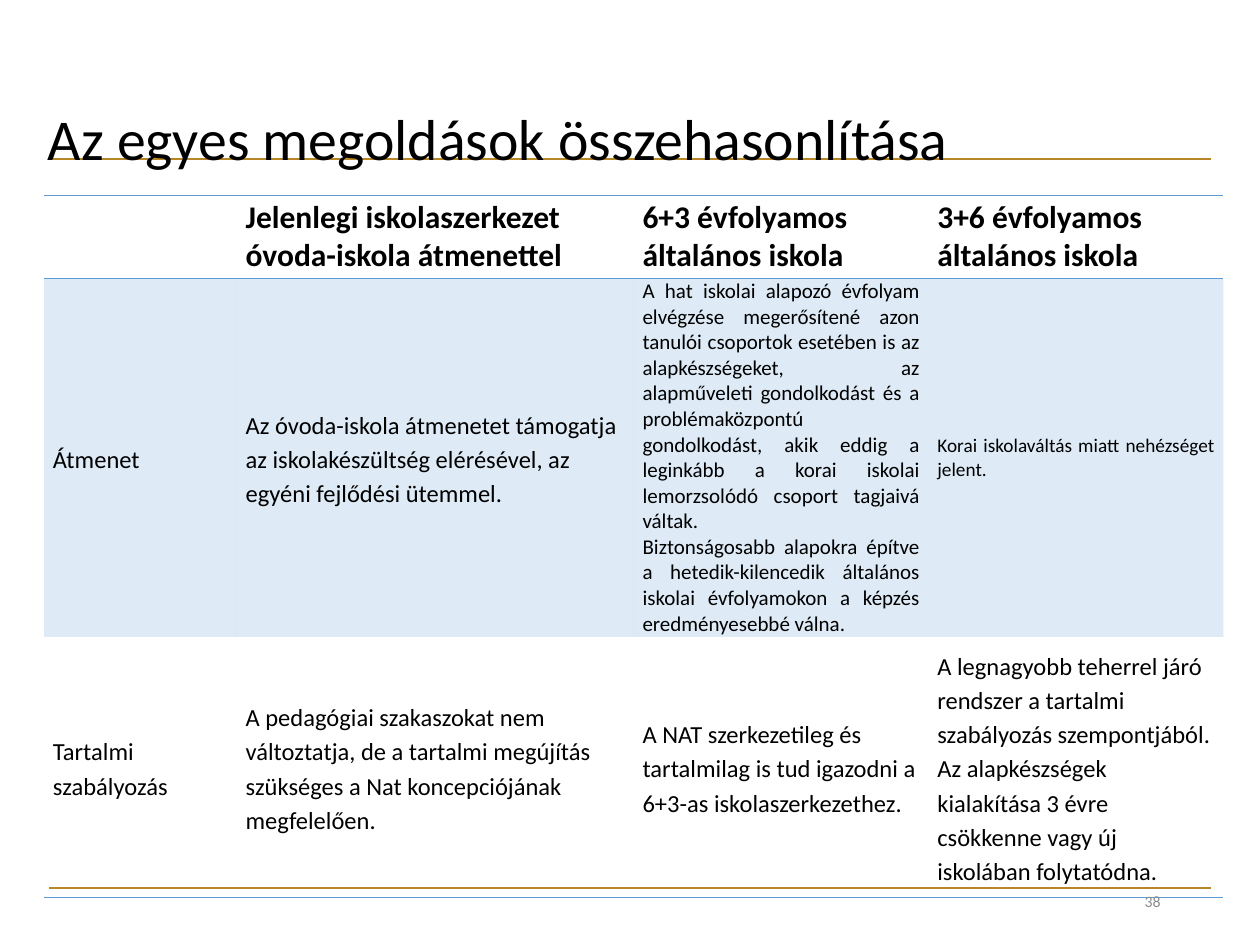
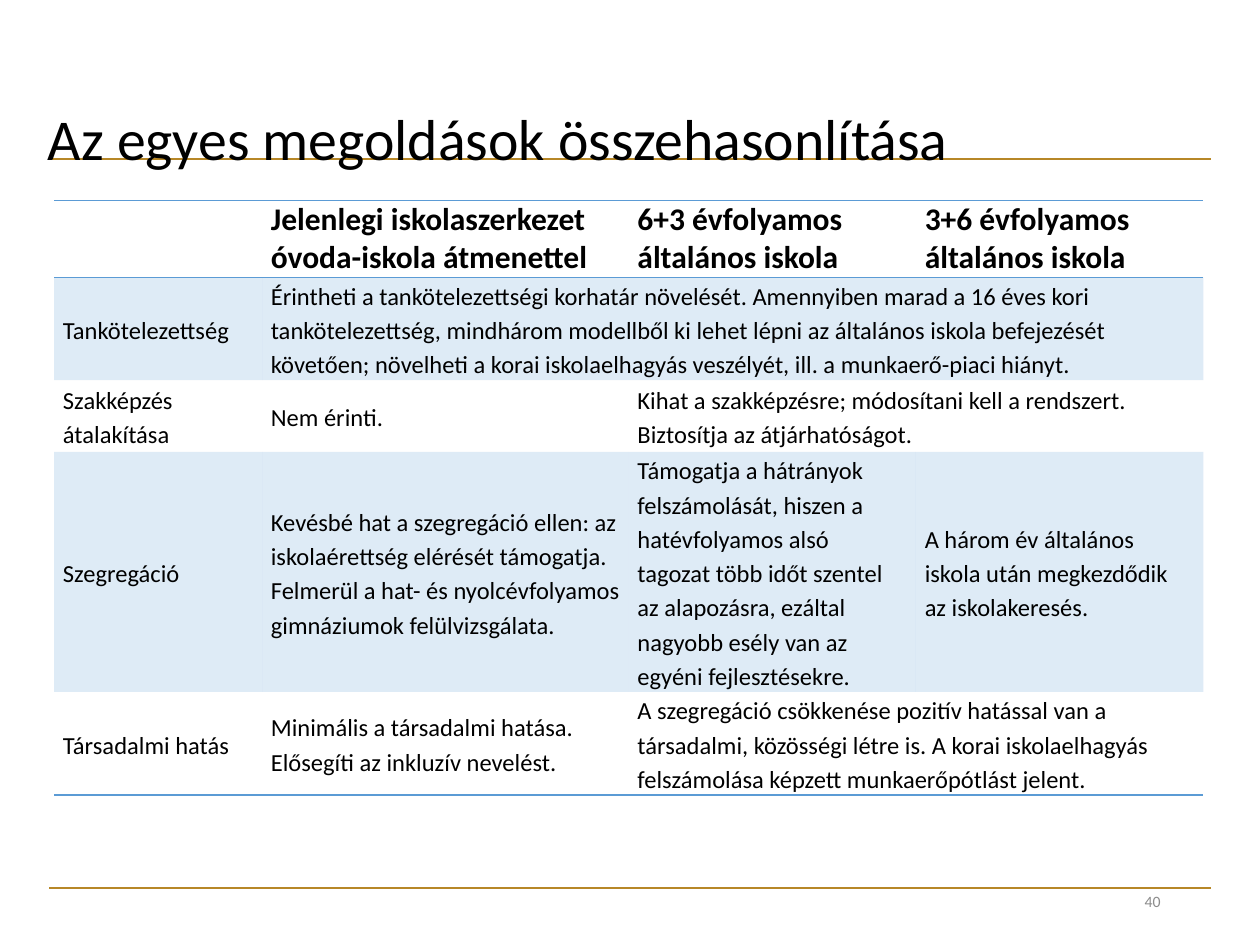
"""Builds two slides comparing school structure options in tables."""
from dataclasses import dataclass
from typing import Optional

from lxml import etree
from pptx import Presentation
from pptx import util as u
from pptx.dml.color import RGBColor
from pptx.enum import text as t
from pptx.oxml.ns import qn

FONT = "Calibri"
BLACK, GREY, GOLD, BLUE = "000000", "8C8C8C", "B78727", "5B9BD5"
BAND_ALPHA = 20
PLAIN_TABLE_STYLE = "{2D5ABB26-0587-4C30-8999-92F81FD0307C}"
TITLE = "Az egyes megoldások összehasonlítása"


@dataclass(frozen=True)
class Entry:
    text: str
    span: int = 1
    size: float = 14
    bold: bool = False
    spacing: Optional[float] = 1.15
    align: t.PP_ALIGN = t.PP_ALIGN.LEFT


@dataclass(frozen=True)
class Comparison:
    page: str
    left: float
    top: float
    widths: tuple[float, ...]
    heights: tuple[float, ...]
    rows: tuple[tuple[Entry, ...], ...]


def heading(content: str) -> Entry:
    return Entry(content, size=18, bold=True, spacing=None)


def justified(content: str, size: float) -> Entry:
    return Entry(content, size=size, spacing=None, align=t.PP_ALIGN.JUSTIFY)


HEADINGS = (
    heading(""),
    heading("Jelenlegi iskolaszerkezet óvoda-iskola átmenettel"),
    heading("6+3 évfolyamos\náltalános iskola"),
    heading("3+6 évfolyamos\náltalános iskola"),
)

COMPARISONS = (
    Comparison("38", 0.35, 1.55, (1.53, 3.15, 2.34, 2.34), (0.66, 2.63, 2.07), (
        HEADINGS,
        (
            Entry("Átmenet"),
            Entry("Az óvoda-iskola átmenetet támogatja az iskolakészültség elérésével, "
                  "az egyéni fejlődési ütemmel."),
            justified("A hat iskolai alapozó évfolyam elvégzése megerősítené azon tanulói "
                      "csoportok esetében is az alapkészségeket, az alapműveleti gondolkodást "
                      "és a problémaközpontú gondolkodást, akik eddig a leginkább a korai "
                      "iskolai lemorzsolódó csoport tagjaivá váltak.\n"
                      "Biztonságosabb alapokra építve a hetedik-kilencedik általános iskolai "
                      "évfolyamokon a képzés eredményesebbé válna.", 12),
            justified("Korai iskolaváltás miatt nehézséget jelent.", 11),
        ),
        (
            Entry("Tartalmi szabályozás"),
            Entry("A pedagógiai szakaszokat nem változtatja, de a tartalmi megújítás "
                  "szükséges a Nat koncepciójának megfelelően."),
            Entry("A NAT szerkezetileg és tartalmilag is tud igazodni a 6+3-as "
                  "iskolaszerkezethez."),
            Entry("A legnagyobb teherrel járó rendszer a tartalmi szabályozás szempontjából. "
                  "Az alapkészségek kialakítása 3 évre csökkenne vagy új iskolában "
                  "folytatódna."),
        ),
    )),
    Comparison("40", 0.43, 1.59, (1.65, 2.91, 2.28, 2.28), (0.6, 0.8, 0.57, 1.88, 0.8), (
        HEADINGS,
        (
            Entry("Tankötelezettség"),
            Entry("Érintheti a tankötelezettségi korhatár növelését. Amennyiben marad a 16 "
                  "éves kori tankötelezettség, mindhárom modellből ki lehet lépni az általános "
                  "iskola befejezését követően; növelheti a korai iskolaelhagyás veszélyét, "
                  "ill. a munkaerő-piaci hiányt.", span=3),
        ),
        (
            Entry("Szakképzés átalakítása"),
            Entry("Nem érinti."),
            Entry("Kihat a szakképzésre; módosítani kell a rendszert.\n"
                  "Biztosítja az átjárhatóságot.", span=2),
        ),
        (
            Entry("Szegregáció"),
            Entry("Kevésbé hat a szegregáció ellen: az iskolaérettség elérését támogatja. "
                  "Felmerül a hat- és nyolcévfolyamos gimnáziumok felülvizsgálata."),
            Entry("Támogatja a hátrányok felszámolását, hiszen a hatévfolyamos alsó tagozat "
                  "több időt szentel az alapozásra, ezáltal nagyobb esély van az egyéni "
                  "fejlesztésekre."),
            Entry("A három év általános iskola után megkezdődik az iskolakeresés."),
        ),
        (
            Entry("Társadalmi hatás"),
            Entry("Minimális a társadalmi hatása. Elősegíti az inkluzív nevelést."),
            Entry("A szegregáció csökkenése pozitív hatással van a társadalmi, közösségi létre "
                  "is. A korai iskolaelhagyás felszámolása képzett munkaerőpótlást jelent.",
                  span=2),
        ),
    )),
)


def rgb(value: str) -> RGBColor:
    return RGBColor.from_string(value)


def write(frame, content: str, *, size: float, color: str = BLACK, bold: bool = False,
          align: t.PP_ALIGN = t.PP_ALIGN.LEFT, spacing: Optional[float] = None) -> None:
    frame.text = content
    for paragraph in frame.paragraphs:
        paragraph.alignment = align
        if spacing:
            paragraph.line_spacing = spacing
        font = paragraph.font
        font.name, font.size, font.bold = FONT, u.Pt(size), bold
        font.color.rgb = rgb(color)


def add_rules(slide) -> None:
    for y in (1.26, 7.05):
        rule = slide.shapes.add_connector(
            1, u.Inches(0.39), u.Inches(y), u.Inches(9.61), u.Inches(y))
        rule.line.color.rgb = rgb(GOLD)
        rule.line.width = u.Pt(1)
        etree.SubElement(rule.element.spPr, qn("a:effectLst"))
        slide.slide_layout.element.cSld.spTree.append(rule.element)


def add_title(slide) -> None:
    title = slide.shapes.title
    title.left, title.top = u.Inches(0.28), u.Inches(0.4)
    title.width, title.height = u.Inches(8.62), u.Inches(1.45)
    frame = title.text_frame
    frame.auto_size = t.MSO_AUTO_SIZE.NONE
    frame.vertical_anchor = t.MSO_ANCHOR.MIDDLE
    write(frame, TITLE, size=33, spacing=0.9)


def add_page_number(slide, page: str) -> None:
    frame = slide.shapes.add_textbox(
        u.Inches(7.06), u.Inches(6.95), u.Inches(2.25), u.Inches(0.4)).text_frame
    frame.word_wrap = True
    frame.vertical_anchor = t.MSO_ANCHOR.MIDDLE
    write(frame, page, size=9, color=GREY, align=t.PP_ALIGN.RIGHT)


def add_border(cell, edge: str) -> None:
    border = etree.Element(qn(f"a:{edge}"), w=str(u.Pt(1)))
    fill = etree.SubElement(border, qn("a:solidFill"))
    etree.SubElement(fill, qn("a:srgbClr"), val=BLUE)
    cell._tc.get_or_add_tcPr().insert(0, border)


def fill_cell(cell, banded: bool) -> None:
    if not banded:
        cell.fill.background()
        return
    cell.fill.solid()
    cell.fill.fore_color.rgb = rgb(BLUE)
    shade = cell._tc.tcPr.find(f"{qn('a:solidFill')}/{qn('a:srgbClr')}")
    etree.SubElement(shade, qn("a:alpha"), val=str(BAND_ALPHA * 1000))


def add_comparison(slide, comparison: Comparison) -> None:
    widths, heights = comparison.widths, comparison.heights
    holder = slide.shapes.add_table(
        len(heights), len(widths), u.Inches(comparison.left), u.Inches(comparison.top),
        u.Inches(sum(widths)), u.Inches(sum(heights)))
    holder.element.xpath(".//a:tableStyleId")[0].text = PLAIN_TABLE_STYLE
    table = holder.table
    table.first_row = table.horz_banding = False
    for column, width in zip(table.columns, widths):
        column.width = u.Inches(width)
    for row, height in zip(table.rows, heights):
        row.height = u.Inches(height)

    last = len(heights) - 1
    for r, entries in enumerate(comparison.rows):
        for c in range(len(widths)):
            cell = table.cell(r, c)
            fill_cell(cell, banded=r % 2 == 1)
            if r in (0, last):
                add_border(cell, "lnB")
            if r == 0:
                add_border(cell, "lnT")
        c = 0
        for entry in entries:
            cell = table.cell(r, c)
            if entry.span > 1:
                cell.merge(table.cell(r, c + entry.span - 1))
            cell.margin_left = cell.margin_right = u.Inches(0.07)
            cell.margin_top = cell.margin_bottom = 0
            cell.vertical_anchor = t.MSO_ANCHOR.MIDDLE
            write(cell.text_frame, entry.text, size=entry.size, bold=entry.bold,
                  align=entry.align, spacing=entry.spacing)
            c += entry.span


def main() -> None:
    deck = Presentation()
    deck.slide_width, deck.slide_height = u.Inches(10), u.Inches(7.5)
    title_only = deck.slide_layouts[5]
    for number, comparison in enumerate(COMPARISONS):
        slide = deck.slides.add_slide(title_only)
        if number == 0:
            add_rules(slide)
        add_title(slide)
        add_comparison(slide, comparison)
        add_page_number(slide, comparison.page)
    deck.save("out.pptx")


if __name__ == "__main__":
    main()
